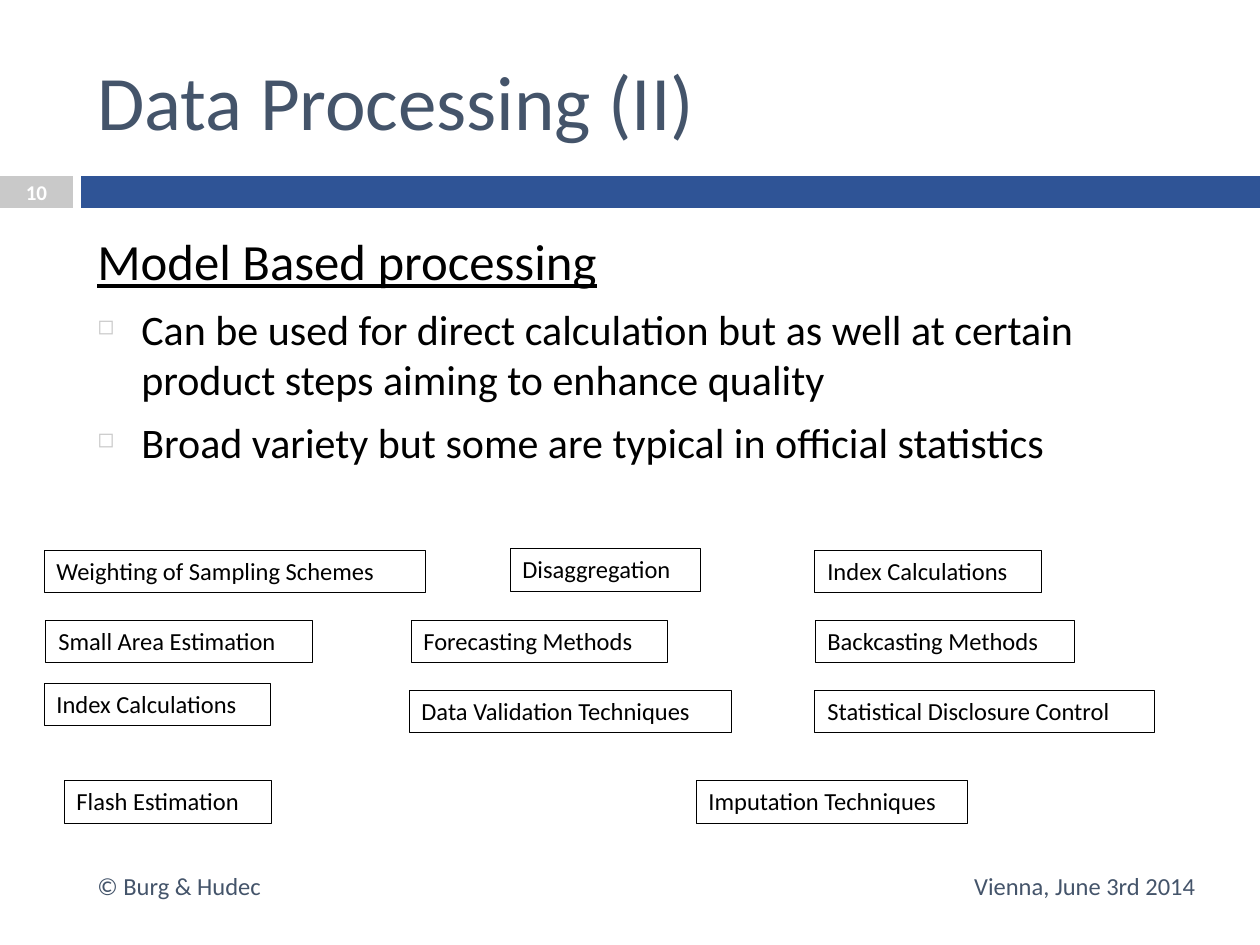
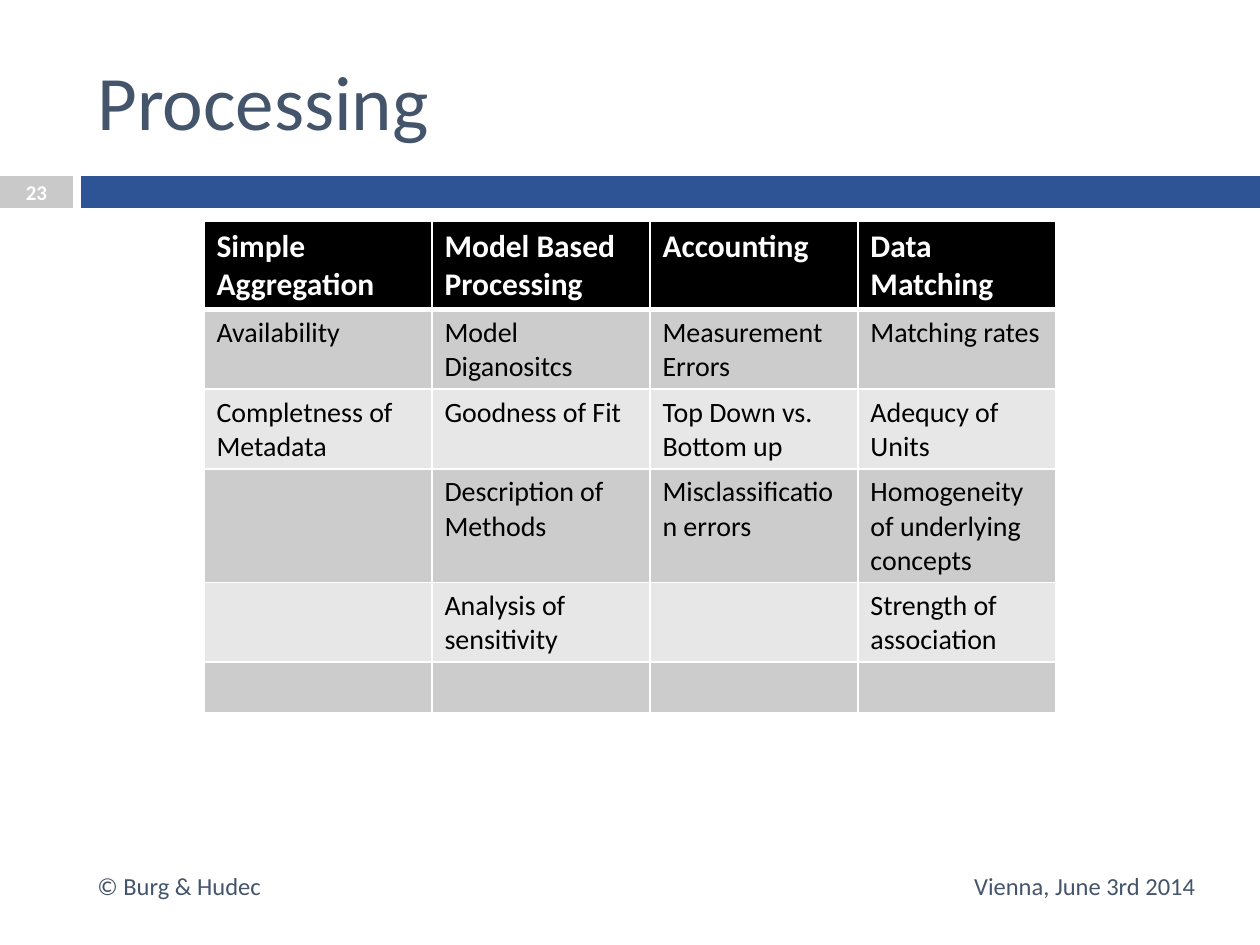
from lxml import etree
from pptx import Presentation
from pptx import util as u
from pptx.dml.color import RGBColor
from pptx.enum import shapes, text
from pptx.oxml.ns import qn

# Shared look
PX = 914400 // 126
FONT = "Calibri"
SLATE, BLUE, GREY = "44546A", "2F5496", "C9C9C9"
BLACK, WHITE = "000000", "FFFFFF"
BANDS = ("CCCCCC", "E7E7E7")
AUTHOR, EVENT = "© Burg & Hudec", "Vienna, June 3rd 2014"
LEFT, MID, RIGHT = text.PP_ALIGN.LEFT, text.PP_ALIGN.CENTER, text.PP_ALIGN.RIGHT

# Slide 1: text, then method boxes as (label, left, top, width)
HEAD = "Model Based processing"
POINTS = [
    "Can be used for direct calculation but as well at certain "
    "product steps aiming to enhance quality",
    "Broad variety but some are typical in official statistics",
]
METHODS = [
    ("Weighting of Sampling Schemes", 44, 550, 382),
    ("Disaggregation", 510, 548, 191),
    ("Index Calculations", 815, 550, 227),
    ("Small Area Estimation", 46, 620, 267),
    ("Forecasting Methods", 411, 620, 256),
    ("Backcasting Methods", 815, 620, 260),
    ("Index Calculations", 44, 683, 227),
    ("Data Validation Techniques", 409, 690, 322),
    ("Statistical Disclosure Control", 815, 690, 340),
    ("Flash Estimation", 64, 780, 208),
    ("Imputation Techniques", 696, 780, 272),
]

# Slide 2: table, header row first
WIDTHS = [228, 218, 208, 198]
ROWS = [
    ["Simple Aggregation", "Model Based\nProcessing", "Accounting", "Data Matching"],
    ["Availability", "Model Diganositcs", "Measurement Errors", "Matching rates"],
    ["Completness of Metadata", "Goodness of Fit", "Top Down vs. Bottom up",
     "Adequcy of Units"],
    ["", "Description of Methods", "Misclassification errors",
     "Homogeneity of underlying concepts"],
    ["", "Analysis of sensitivity", "", "Strength of association"],
    ["", "", "", ""],
]


def rgb(code):
    return RGBColor.from_string(code)


def px(*nums):
    return [n * PX for n in nums]


def style(para, size, color=BLACK, bold=False, align=LEFT):
    para.alignment = align
    font = para.font
    font.name, font.size, font.bold = FONT, u.Pt(size), bold
    font.color.rgb = rgb(color)


def label(slide, words, area, size, color=SLATE, **look):
    frame = slide.shapes.add_textbox(*px(*area)).text_frame
    frame.word_wrap = True
    frame.vertical_anchor = text.MSO_ANCHOR.MIDDLE
    frame.text = words
    style(frame.paragraphs[0], size, color, **look)


def rect(slide, area, fill=None, line=None):
    shape = slide.shapes.add_shape(shapes.MSO_SHAPE.RECTANGLE, *px(*area))
    shape.shadow.inherit = False
    if fill:
        shape.fill.solid()
        shape.fill.fore_color.rgb = rgb(fill)
    else:
        shape.fill.background()
    if line:
        shape.line.color.rgb = rgb(line)
        shape.line.width = u.Pt(0.5)
    else:
        shape.line.fill.background()
    return shape


def child(parent, tag, **attrs):
    return etree.SubElement(parent, qn(tag), attrs)


def bullet(para):
    props = para._p.get_or_add_pPr()
    indent = 44 * PX
    props.set("marL", str(indent))
    props.set("indent", str(-indent))
    child(child(props, "a:buClr"), "a:srgbClr", val=GREY)
    child(props, "a:buSzPct", val="50000")
    child(props, "a:buChar", char="◻")


def border(cell, bottom):
    props = cell._tc.get_or_add_tcPr()
    for side, width in zip("LRTB", (1, 1, 1, bottom)):
        line = child(props, "a:ln" + side, w=str(u.Pt(width)))
        child(child(line, "a:solidFill"), "a:srgbClr", val=WHITE)


def base(deck, title, number):
    """Blank slide with title, band, page number and footers."""
    slide = deck.slides.add_slide(deck.slide_layouts[6])
    rect(slide, (0, 176, 73, 32), GREY)
    rect(slide, (81, 176, 1179, 32), BLUE)
    label(slide, title, (85, 32, 912, 136), 44)
    label(slide, number, (0, 175, 73, 34), 12, WHITE, bold=True, align=MID)
    label(slide, AUTHOR, (85, 861, 747, 50), 14)
    label(slide, EVENT, (840, 861, 368, 50), 14, align=RIGHT)
    return slide


def methods(deck):
    slide = base(deck, "Data Processing (II)", "10")

    # Heading and bullets
    frame = slide.shapes.add_textbox(*px(85, 224, 1124, 260)).text_frame
    frame.word_wrap = True
    frame.text = HEAD
    style(frame.paragraphs[0], 29)
    frame.paragraphs[0].font.underline = True
    for point in POINTS:
        para = frame.add_paragraph()
        para.text = point
        bullet(para)
        para.space_before = u.Pt(7)
        style(para, 24)

    # Method boxes
    for name, left, top, width in METHODS:
        frame = rect(slide, (left, top, width, 43), line=BLACK).text_frame
        frame.vertical_anchor = text.MSO_ANCHOR.TOP
        frame.text = name
        style(frame.paragraphs[0], 14)


def quality(deck):
    slide = base(deck, "Processing", "23")
    area = px(204, 221, sum(WIDTHS), 51 * len(ROWS))
    table = slide.shapes.add_table(len(ROWS), len(WIDTHS), *area).table
    for col, width in zip(table.columns, WIDTHS):
        col.width = width * PX
    for r, row in enumerate(ROWS):
        head = r == 0
        for c, words in enumerate(row):
            cell = table.cell(r, c)
            border(cell, 3 if head else 1)
            cell.fill.solid()
            cell.fill.fore_color.rgb = rgb(BLACK if head else BANDS[(r - 1) % 2])
            cell.text = words
            for para in cell.text_frame.paragraphs:
                style(para, 18 if head else 16, WHITE if head else BLACK, bold=head)


def main():
    deck = Presentation()
    deck.slide_width, deck.slide_height = u.Inches(10), u.Inches(7.5)
    methods(deck)
    quality(deck)
    deck.save("out.pptx")


if __name__ == "__main__":
    main()
